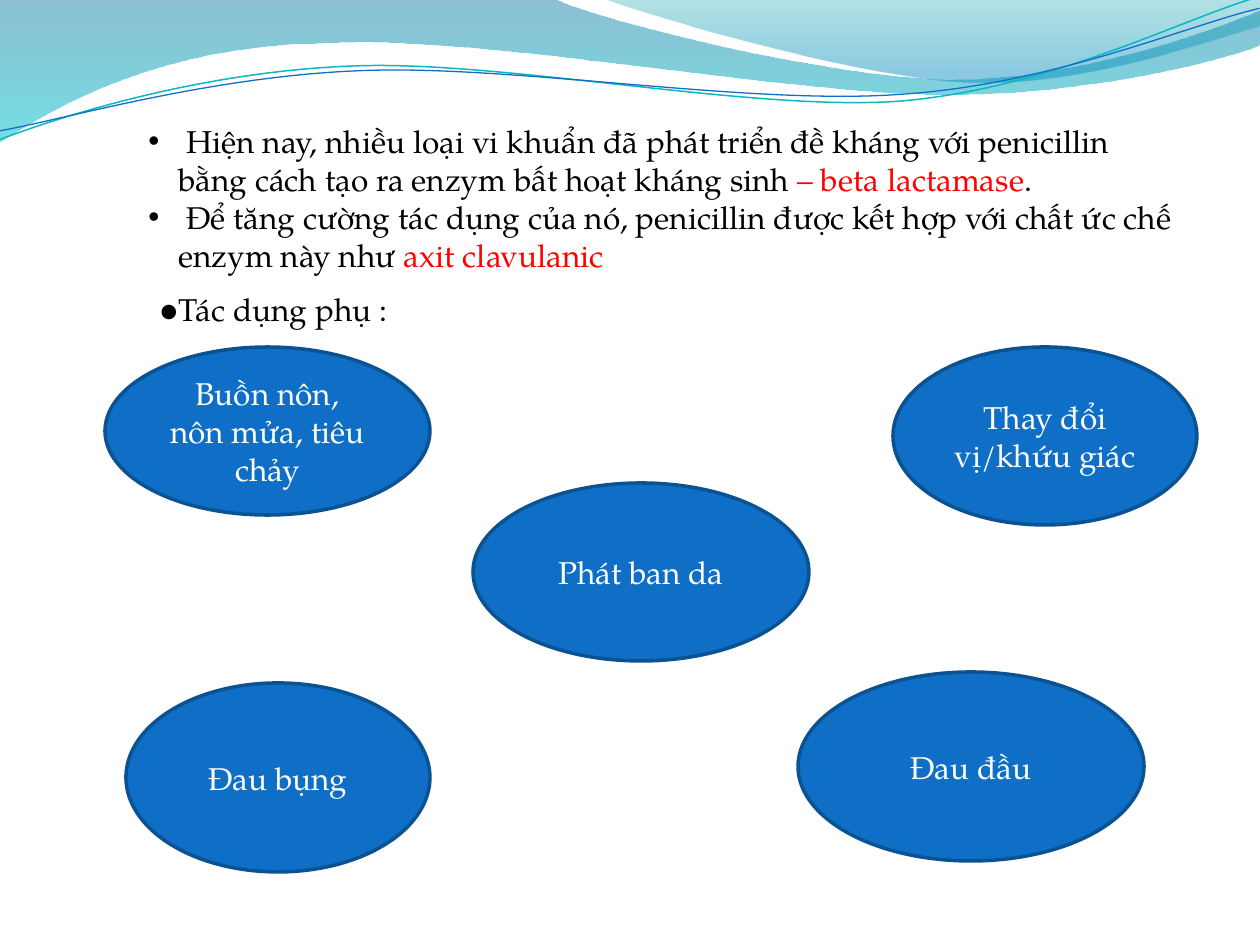
import pptx
import pptx.dml.color
import pptx.enum.shapes
import pptx.enum.text
import pptx.oxml.ns
import pptx.util
from lxml import etree

RGBColor = pptx.dml.color.RGBColor
BLACK = RGBColor(0x00, 0x00, 0x00)
WHITE = RGBColor(0xFF, 0xFF, 0xFF)
RED = RGBColor(0xFF, 0x00, 0x00)
BLUE = RGBColor(0x0F, 0x6F, 0xC6)
DARK_BLUE = RGBColor(0x0B, 0x52, 0x92)
TEAL = RGBColor(0x0A, 0xB8, 0xBF)
BAND_BLUE = RGBColor(0x00, 0x74, 0xA1)
BAND_CYAN = RGBColor(0x00, 0xC6, 0xCF)
VEIL_TEAL = RGBColor(0x00, 0xA1, 0xA9)
VEIL_BLUE = RGBColor(0x00, 0x8B, 0xBF)
SERIF = "TeX Gyre Pagella"
PX = 914400 / 126
qn = pptx.oxml.ns.qn

deck = pptx.Presentation()
deck.slide_width, deck.slide_height = round(1260 * PX), round(945 * PX)
page = deck.slides.add_slide(deck.slide_layouts[6])


def add_wave(start, pieces, close):
    """Draw an outline: a piece of one point is a line, of three a Bézier curve."""
    builder = page.shapes.build_freeform(*start, scale=PX)
    builder.add_line_segments([point for piece in pieces for point in piece], close=close)
    wave = builder.convert_to_shape()
    wave.shadow.inherit = False
    segments = iter(list(wave._element.iter(qn("a:lnTo"))))
    for piece in pieces:
        nodes = [next(segments) for point in piece]
        if len(piece) == 3:
            curve = etree.Element(qn("a:cubicBezTo"))
            nodes[0].addprevious(curve)
            for node in nodes:
                curve.append(node[0])
                node.getparent().remove(node)
    return wave


def add_spans(para, spans):
    for text, color, font in spans:
        span = para.add_run()
        span.text = text
        span.font.color.rgb = color
        for name, value in {"size": pptx.util.Pt(18), "name": font}.items():
            setattr(span.font, name, value)


# Translucent bands along the top: stops are position, colour, opacity in percent
bands = [
    ((0, 0), [[(554, -1)],
              [(600, 21), (837, 79), (955, 79)],
              [(1075, 79), (1207, 33), (1260, 11)],
              [(1261, 45)],
              [(1239, 55), (1096, 96), (940, 94)],
              [(784, 94), (481, 35), (324, 43)],
              [(163, 45), (58, 105), (-1, 142)]],
     [(0, BAND_BLUE, 45), (1, BAND_CYAN, 55)]),
    ((604, -1), [[(641, 14), (859, 78), (969, 82)],
                 [(1079, 87), (1211, 40), (1260, 26)],
                 [(1260, 0)]],
     [(0, VEIL_TEAL, 30), (0.8, VEIL_BLUE, 45)]),
]
for start, pieces, stops in bands:
    band = add_wave(start, pieces, True)
    band.line.fill.background()
    band.fill.gradient()
    band.fill.gradient_angle = 270
    for stop, (position, color, opacity) in zip(band.fill.gradient_stops, stops):
        stop.position = position
        stop.color.rgb = color
    colors = list(band._element.spPr.iter(qn("a:srgbClr")))
    for color_xml, (position, color, opacity) in zip(colors, stops):
        etree.SubElement(color_xml, qn("a:alpha"), val=str(opacity * 1000))

# Thin wave lines, tilted together
lines = [
    ((-3, 110), [[(58, 90), (199, 52), (350, 53)],
                 [(499, 53), (745, 117), (896, 114)],
                 [(1049, 109), (1184, 45), (1260, 27)]], TEAL, 0.85),
    ((-2, 101), [[(57, 94), (207, 57), (358, 58)],
                 [(509, 58), (750, 112), (902, 107)],
                 [(1052, 104), (1188, 52), (1262, 38)]], BLUE, 0.75),
]
for start, pieces, color, width in lines:
    wave_line = add_wave(start, pieces, False)
    wave_line.rotation = -2.7
    wave_line.fill.background()
    wave_line.line.color.rgb = color
    wave_line.line.width = pptx.util.Pt(width)

# Resistance bullets and side effects heading
text_boxes = [
    ((136, 116, 1050, 165), True, [
        [(" Hiện nay, nhiều loại vi khuẩn đã phát triển đề kháng với penicillin "
          "bằng cách tạo ra enzym bất hoạt kháng sinh ", BLACK, SERIF),
         ("– beta lactamase", RED, SERIF), (".", BLACK, SERIF)],
        [(" Để tăng cường tác dụng của nó, penicillin được kết hợp với chất ức chế "
          "enzym này như ", BLACK, SERIF),
         ("axit clavulanic", RED, SERIF)],
    ]),
    ((147, 284, 798, 50), False, [
        [("●", BLACK, "Calibri"), ("Tác dụng phụ :", BLACK, SERIF)],
    ]),
]
for bounds, bulleted, paragraphs in text_boxes:
    box = page.shapes.add_textbox(*(round(length * PX) for length in bounds))
    box.text_frame.word_wrap = True
    box.text_frame.auto_size = pptx.enum.text.MSO_AUTO_SIZE.SHAPE_TO_FIT_TEXT
    for index, spans in enumerate(paragraphs):
        para = box.text_frame.add_paragraph() if index else box.text_frame.paragraphs[0]
        if bulleted:
            properties = para._p.get_or_add_pPr()
            indent = round(30 * PX)
            properties.set("marL", str(indent))
            properties.set("indent", str(-indent))
            etree.SubElement(properties, qn("a:buFont"), typeface="Arial")
            etree.SubElement(properties, qn("a:buChar"), char="•")
        add_spans(para, spans)

# Side effect ovals
effects = [
    ("Buồn nôn, nôn mửa, tiêu chảy", (105, 347, 325, 168)),
    ("Phát ban da", (473, 483, 336, 178)),
    ("Thay đổi vị/khứu giác", (893, 347, 304, 178)),
    ("Đau bụng", (126, 683, 304, 189)),
    ("Đau đầu", (798, 672, 346, 189)),
]
for effect, bounds in effects:
    oval = page.shapes.add_shape(pptx.enum.shapes.MSO_SHAPE.OVAL,
                                 *(round(length * PX) for length in bounds))
    oval.shadow.inherit = False
    oval.fill.solid()
    oval.fill.fore_color.rgb = BLUE
    oval.line.color.rgb = DARK_BLUE
    oval.line.width = pptx.util.Pt(2)
    oval.text_frame.word_wrap = True
    oval.text_frame.vertical_anchor = pptx.enum.text.MSO_ANCHOR.MIDDLE
    para = oval.text_frame.paragraphs[0]
    para.alignment = pptx.enum.text.PP_ALIGN.CENTER
    add_spans(para, [(effect, WHITE, SERIF)])

deck.save("out.pptx")
